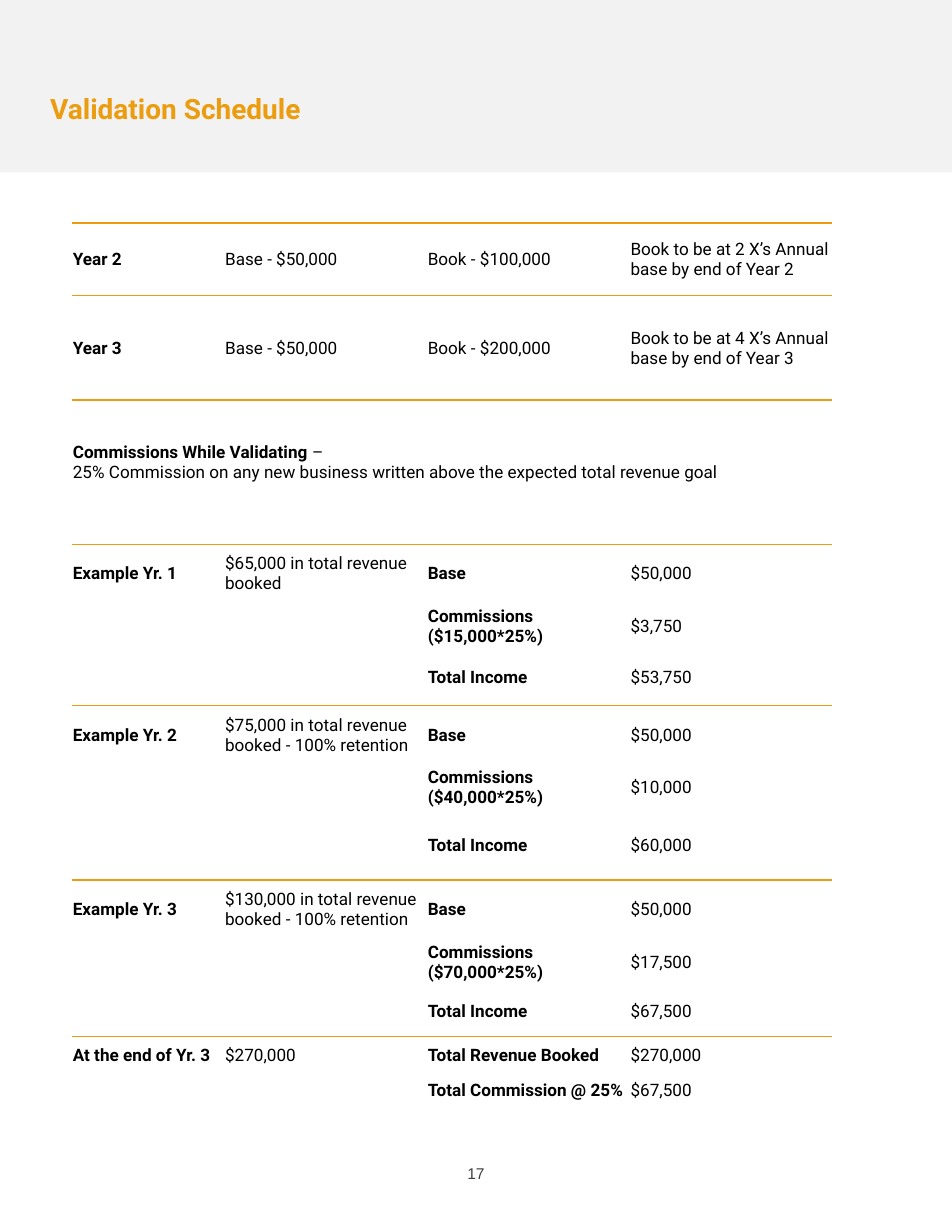
from lxml.etree import SubElement
from pptx import Presentation
from pptx.dml.color import RGBColor
from pptx.enum.shapes import MSO_SHAPE as SHAPE
from pptx.enum.text import MSO_ANCHOR as ANCHOR, PP_ALIGN as ALIGN
from pptx.oxml.ns import qn
from pptx.util import Inches, Pt

ORANGE = RGBColor(0xEB, 0x9C, 0x0F)
LIGHT = RGBColor(0xF2, 0xF2, 0xF2)
BLACK = RGBColor(0, 0, 0)
GREY = RGBColor(0x40, 0x40, 0x40)
NO_STYLE = "{2D5ABB26-0587-4C30-8999-92F81FD0307C}"

COL_WIDTHS = [1.36, 1.81, 1.81, 1.81]
ROW_HEIGHTS = [0.65, 0.93, 1.29, 0.52, 0.42, 0.5, 0.52,
               0.42, 0.62, 0.52, 0.42, 0.46, 0.32, 0.32]
NOTE_ROW = 2
RULED_BELOW = {0, 1, 2, 5, 8, 11}

YEARS = [
    ("Year 2", "Base - $50,000", "Book - $100,000",
     "Book to be at 2 X’s Annual base by end of Year 2"),
    ("Year 3", "Base - $50,000", "Book - $200,000",
     "Book to be at 4 X’s Annual base by end of Year 3"),
]
NOTE_HEAD = "Commissions While Validating "
NOTE_BODY = "– \v25% Commission on any new business written above the expected total revenue goal"
# Year, revenue booked, commission base, commission, total income
EXAMPLES = [
    ("1", "$65,000 in total revenue booked", "$15,000", "$3,750", "$53,750"),
    ("2", "$75,000 in total revenue booked - 100% retention", "$40,000", "$10,000", "$60,000"),
    ("3", "$130,000 in total revenue booked - 100% retention", "$70,000", "$17,500", "$67,500"),
]
TOTALS = [
    ("At the end of Yr. 3", "$270,000", "Total Revenue Booked", "$270,000"),
    ("", "", "Total Commission @ 25%", "$67,500"),
]


def add_text(p, text, size=11, font="Roboto", color=BLACK, bold=False, align=None):
    """Append text to a paragraph; \\v marks a line break."""
    if align is not None:
        p.alignment = align
    for i, line in enumerate(text.split("\v")):
        if i:
            p.add_line_break()
        r = p.add_run()
        r.text = line
        r.font.size, r.font.name, r.font.bold = Pt(size), font, bold
        r.font.color.rgb = color


def add_box(slide, box, text, anchor=ANCHOR.TOP, **fmt):
    tf = slide.shapes.add_textbox(*map(Inches, box)).text_frame
    tf.word_wrap = True
    tf.vertical_anchor = anchor
    add_text(tf.paragraphs[0], text, **fmt)
    return tf


def set_borders(cell, top, bottom):
    """Orange rules above and below as asked, no other borders."""
    tc_pr = cell._tc.get_or_add_tcPr()
    sides = {"a:lnL": False, "a:lnR": False, "a:lnT": top, "a:lnB": bottom}
    for tag, shown in sides.items():
        ln = SubElement(tc_pr, qn(tag), w=str(Pt(1)))
        if shown:
            fill = SubElement(ln, qn("a:solidFill"))
            SubElement(fill, qn("a:srgbClr"), val=str(ORANGE))
        else:
            SubElement(ln, qn("a:noFill"))


def schedule_rows():
    rows = YEARS + [("", "", "", "")]
    for year, booked, above, commission, total in EXAMPLES:
        rows += [
            (f"Example Yr. {year}", booked, "Base", "$50,000"),
            ("", "", f"Commissions ({above}*25%)", commission),
            ("", "", "Total Income", total),
        ]
    return rows + TOTALS


def add_header(slide, box):
    # Band across the top with the title
    left, top, width, height = box
    sp = slide.shapes.add_shape(SHAPE.RECTANGLE, *map(Inches, box))
    sp.shadow.inherit = False
    sp.fill.solid()
    sp.fill.fore_color.rgb = LIGHT
    sp.line.fill.background()
    add_box(slide, (left + 0.35, top + 0.77, 3.68, 0.4), "Validation Schedule",
            anchor=ANCHOR.MIDDLE, size=18, color=ORANGE, bold=True)


def add_schedule(slide, box):
    rows = schedule_rows()
    frame = slide.shapes.add_table(len(rows), len(COL_WIDTHS), *map(Inches, box))
    table = frame.table
    table.first_row = table.horz_banding = False
    table._tbl.tblPr.find(qn("a:tableStyleId")).text = NO_STYLE
    for col, width in zip(table.columns, COL_WIDTHS):
        col.width = Inches(width)
    for row, height in zip(table.rows, ROW_HEIGHTS):
        row.height = Inches(height)

    # Cells
    for i, texts in enumerate(rows):
        for j, text in enumerate(texts):
            cell = table.cell(i, j)
            cell.margin_left = cell.margin_right = cell.margin_top = Inches(0.01)
            cell.margin_bottom = 0
            cell.vertical_anchor = ANCHOR.MIDDLE
            set_borders(cell, i == 0 or i - 1 in RULED_BELOW, i in RULED_BELOW)
            cell.fill.background()
            if text:
                bold = j == 0 or (j == 2 and i > NOTE_ROW)
                add_text(cell.text_frame.paragraphs[0], text, bold=bold)

    # Commission note across all columns
    note = table.cell(NOTE_ROW, 0)
    note.merge(table.cell(NOTE_ROW, len(COL_WIDTHS) - 1))
    note.margin_bottom = Inches(0.18)
    p = note.text_frame.paragraphs[0]
    add_text(p, NOTE_HEAD, bold=True)
    add_text(p, NOTE_BODY)


def add_page_number(slide, box):
    tf = add_box(slide, box, "17", size=10, font="Arial", color=GREY, align=ALIGN.CENTER)
    tf.paragraphs[0].space_after = Pt(12)


def main():
    prs = Presentation()
    prs.slide_width, prs.slide_height = Inches(8.5), Inches(11)
    slide = prs.slides.add_slide(prs.slide_layouts[6])
    add_header(slide, (0, 0, 8.5, 1.54))
    add_schedule(slide, (0.64, 1.99, 6.78, 7.97))
    add_page_number(slide, (4, 10.34, 0.5, 0.27))
    prs.save("out.pptx")


if __name__ == "__main__":
    main()
